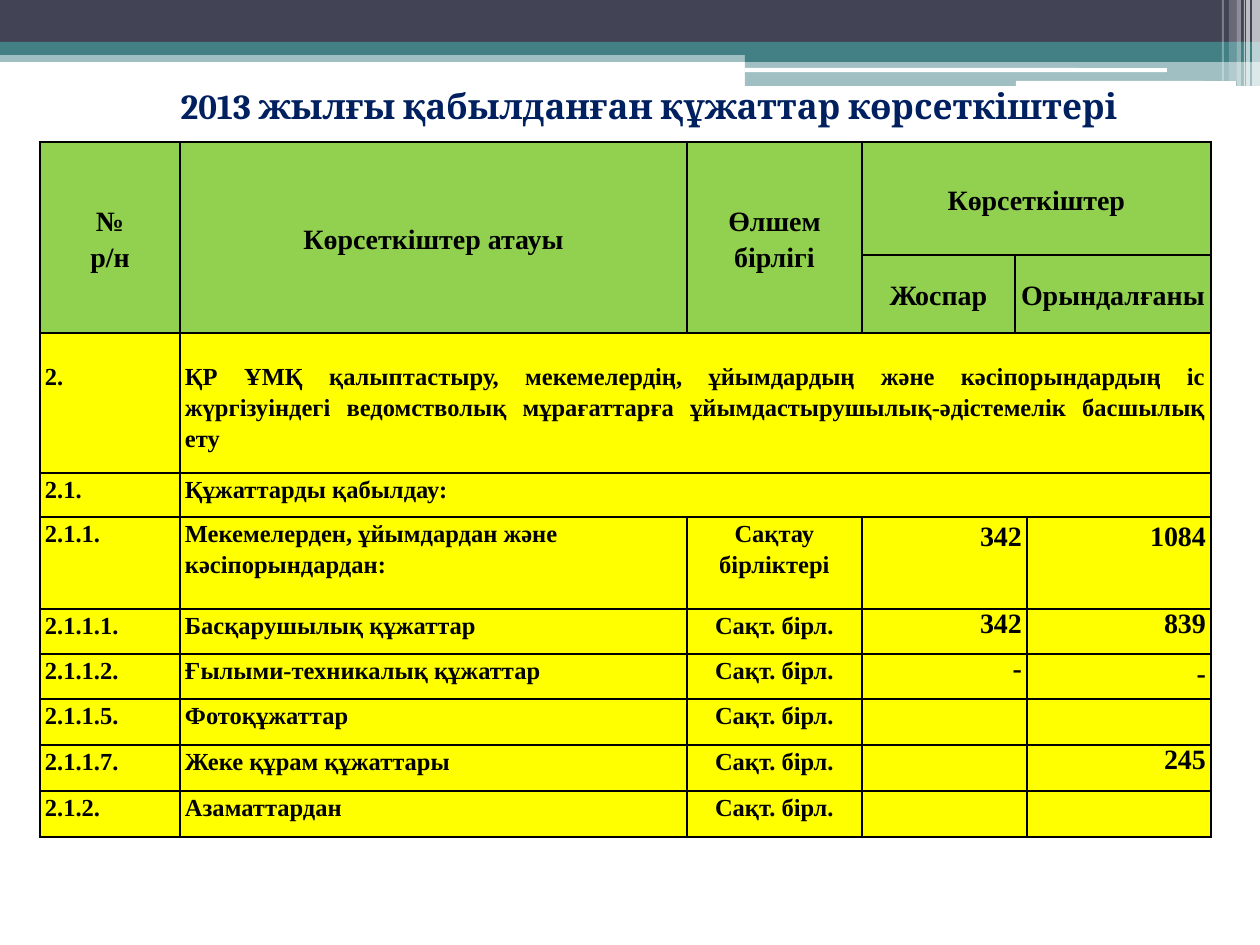
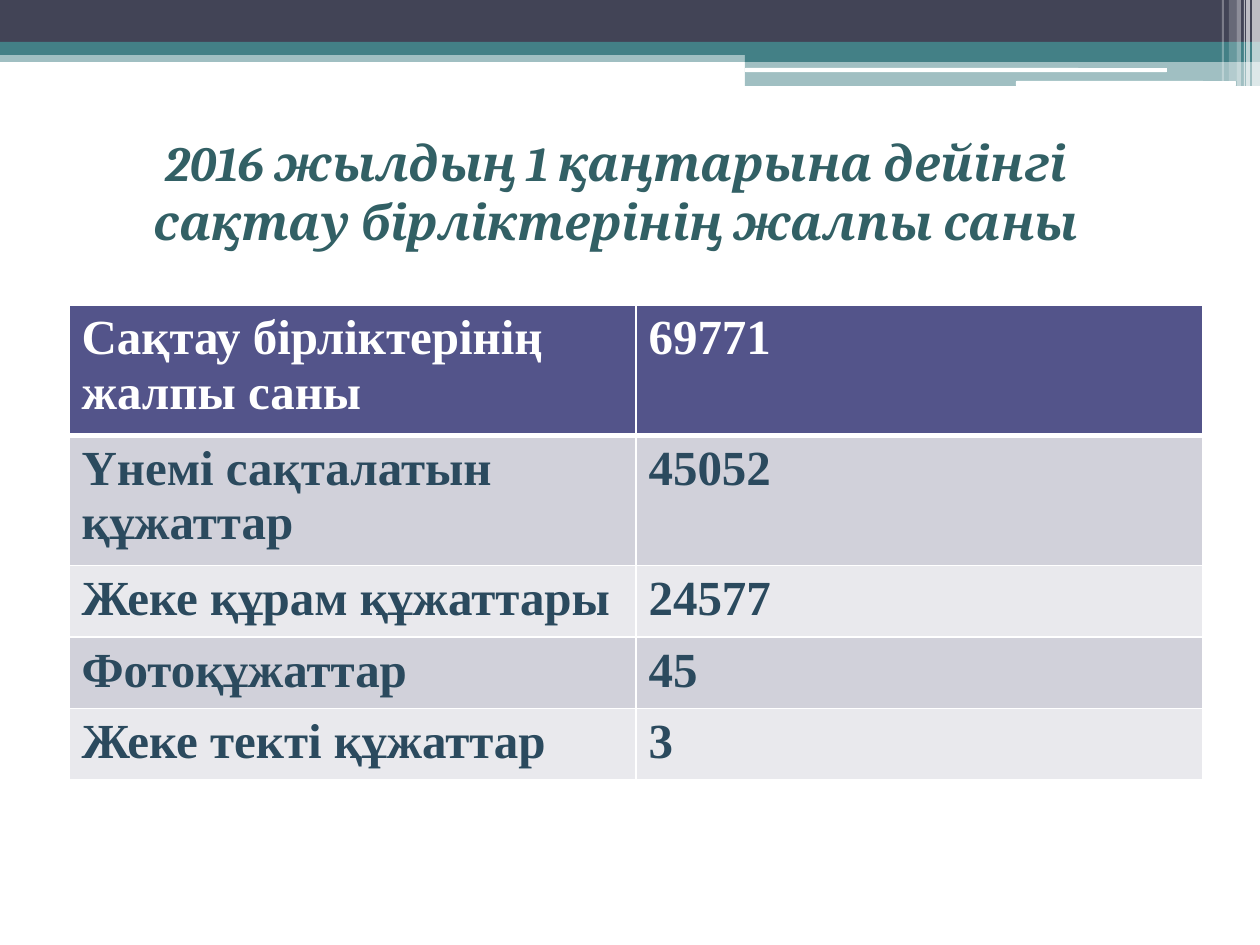
from dataclasses import dataclass

import lxml.etree
import pptx
import pptx.util
from pptx.dml.color import RGBColor
from pptx.enum.shapes import MSO_SHAPE
from pptx.enum.text import MSO_ANCHOR, PP_ALIGN
from pptx.oxml.ns import qn

PX_PER_INCH = 126
EMU_PER_PX = 914400 / PX_PER_INCH

SLATE = RGBColor(0x42, 0x44, 0x56)
TEAL = RGBColor(0x43, 0x80, 0x86)
DARK_TEAL = RGBColor(0x32, 0x60, 0x65)
NAVY = RGBColor(0x00, 0x20, 0x60)
INDIGO = RGBColor(0x53, 0x54, 0x8A)
STEEL = RGBColor(0x2B, 0x4A, 0x5E)
GREY = RGBColor(0xD1, 0xD1, 0xDA)
LIGHT_GREY = RGBColor(0xE9, 0xE9, 0xED)
GREEN = RGBColor(0x92, 0xD0, 0x50)
YELLOW = RGBColor(0xFF, 0xFF, 0x00)
WHITE = RGBColor(0xFF, 0xFF, 0xFF)
BLACK = RGBColor(0x00, 0x00, 0x00)

TITLE_FONT = "Cambria"
TABLE_FONT = "Times New Roman"
LEFT, CENTER, RIGHT = PP_ALIGN.LEFT, PP_ALIGN.CENTER, PP_ALIGN.RIGHT


@dataclass
class Box:
    left: int
    top: int
    width: int
    height: int


@dataclass
class Band:
    box: Box
    color: RGBColor
    opacity: int = 100
    rounded: bool = False


@dataclass
class Style:
    size: int
    color: RGBColor
    font: str = TABLE_FONT
    italic: bool = False


@dataclass
class Entry:
    """Text block; each line is a paragraph, a newline inside it a line break."""
    lines: tuple[str, ...]
    style: Style
    align: PP_ALIGN = LEFT
    spacing: float = 1.0


@dataclass
class Edges:
    color: RGBColor
    bottom_width: int = 1


BANDS = [
    Band(Box(0, 50, 1260, 12), TEAL, 50),
    Band(Box(0, 0, 1260, 43), SLATE),
    Band(Box(0, 42, 1260, 13), TEAL),
    Band(Box(745, 49, 515, 13), TEAL),
    Band(Box(745, 61, 515, 25), TEAL, 50),
    Band(Box(745, 68, 422, 4), WHITE, rounded=True),
    Band(Box(1016, 81, 220, 5), WHITE, rounded=True),
    Band(Box(1252, 0, 8, 86), WHITE, 65),
    Band(Box(1246, 0, 4, 86), WHITE, 65),
    Band(Box(1244, 0, 1, 86), WHITE, 60),
    Band(Box(1237, 0, 4, 86), WHITE, 40),
    Band(Box(1229, 0, 8, 81), WHITE, 20),
    Band(Box(1222, 0, 2, 81), WHITE, 30),
]


def px(length: float) -> int:
    return round(length * EMU_PER_PX)


def place(box: Box) -> tuple[int, int, int, int]:
    return px(box.left), px(box.top), px(box.width), px(box.height)


def add_slide(deck):
    """Blank slide with the shared header bands."""
    slide = deck.slides.add_slide(deck.slide_layouts[6])
    for band in BANDS:
        preset = MSO_SHAPE.ROUNDED_RECTANGLE if band.rounded else MSO_SHAPE.RECTANGLE
        strip = slide.shapes.add_shape(preset, *place(band.box))
        strip.shadow.inherit = False
        strip.line.fill.background()
        strip.fill.solid()
        strip.fill.fore_color.rgb = band.color
        if band.opacity < 100:
            tint = strip.fill._xPr.find(".//" + qn("a:srgbClr"))
            lxml.etree.SubElement(tint, qn("a:alpha"), val=str(band.opacity * 1000))
    return slide


def add_run(paragraph, text: str, style: Style) -> None:
    run = paragraph.add_run()
    run.text = text
    run.font.name = style.font
    run.font.size = pptx.util.Pt(style.size)
    run.font.bold = True
    run.font.italic = style.italic
    run.font.color.rgb = style.color


def write(frame, entry: Entry) -> None:
    for index, line in enumerate(entry.lines):
        paragraph = frame.add_paragraph() if index else frame.paragraphs[0]
        paragraph.alignment = entry.align
        paragraph.line_spacing = entry.spacing
        for part, text in enumerate(line.split("\n")):
            if part:
                paragraph.add_line_break()
            add_run(paragraph, text, entry.style)


def add_title(slide, box: Box, text: str, style: Style, anchor: MSO_ANCHOR) -> None:
    frame = slide.shapes.add_textbox(*place(box)).text_frame
    frame.word_wrap = True
    frame.vertical_anchor = anchor
    write(frame, Entry((text,), style, CENTER))


def add_grid(slide, left: int, top: int, widths: list[int], heights: list[int]):
    box = Box(left, top, sum(widths), sum(heights))
    grid = slide.shapes.add_table(len(heights), len(widths), *place(box)).table
    grid.horz_banding = False
    grid.first_row = False
    for column, width in zip(grid.columns, widths):
        column.width = px(width)
    for row, height in zip(grid.rows, heights):
        row.height = px(height)
    return grid


def paint(cell, fill: RGBColor, edges: Edges) -> None:
    properties = cell._tc.get_or_add_tcPr()
    for side in ("lnL", "lnR", "lnT", "lnB"):
        points = edges.bottom_width if side == "lnB" else 1
        edge = lxml.etree.SubElement(properties, qn(f"a:{side}"), w=str(pptx.util.Pt(points)))
        solid = lxml.etree.SubElement(edge, qn("a:solidFill"))
        lxml.etree.SubElement(solid, qn("a:srgbClr"), val=str(edges.color))
    cell.fill.solid()
    cell.fill.fore_color.rgb = fill


# Slide 1: accepted documents
HEAD = Style(16, BLACK)
BODY = Style(14, BLACK)
LOOSE = 1.15
UNIT = "Сақт. бірл."
HEADER_ROWS = 2


def heading(*lines: str) -> Entry:
    return Entry(lines, HEAD, CENTER, LOOSE)


def label(text: str, align: PP_ALIGN = LEFT) -> Entry:
    return Entry((text,), BODY, align, LOOSE)


def figure(text: str, spacing: float = 1.0) -> Entry:
    return Entry((text,), HEAD, RIGHT, spacing)


def indicator(number: str, name: str, unit: str = UNIT, plan: Entry | None = None,
              done: Entry | None = None) -> dict[int, Entry]:
    """Cells of one indicator row by column."""
    row = {0: label(number), 1: label(name), 2: label(unit, CENTER), 3: plan, 5: done}
    return {column: entry for column, entry in row.items() if entry}


INDICATORS = [
    {0: heading("№", "р/н"), 1: heading("Көрсеткіштер атауы"),
     2: heading("Өлшем бірлігі"), 3: heading("Көрсеткіштер")},
    {3: heading("Жоспар"), 4: heading("Орындалғаны")},
    {0: label("2."),
     1: label("ҚР ҰМҚ қалыптастыру, мекемелердің, ұйымдардың және кәсіпорындардың іс "
              "жүргізуіндегі ведомстволық мұрағаттарға ұйымдастырушылық-әдістемелік "
              "басшылық\nету", PP_ALIGN.JUSTIFY)},
    {0: label("2.1."), 1: label("Құжаттарды қабылдау:")},
    indicator("2.1.1.", "Мекемелерден, ұйымдардан және кәсіпорындардан:",
              "Сақтау бірліктері", figure("342", LOOSE), figure("1084", LOOSE)),
    indicator("2.1.1.1.", "Басқарушылық құжаттар", plan=figure("342"), done=figure("839")),
    indicator("2.1.1.2.", "Ғылыми-техникалық құжаттар",
              plan=figure("-"), done=figure("-", LOOSE)),
    indicator("2.1.1.5.", "Фотоқұжаттар"),
    indicator("2.1.1.7.", "Жеке құрам құжаттары", done=figure("245")),
    indicator("2.1.2.", "Азаматтардан"),
]


def build_indicators(deck) -> None:
    slide = add_slide(deck)
    widths = [140, 507, 175, 153, 12, 184]
    heights = [113, 78, 140, 44, 92, 45, 45, 46, 46, 46]
    grid = add_grid(slide, 40, 142, widths, heights)
    for r, row in enumerate(INDICATORS):
        for c in range(len(widths)):
            cell = grid.cell(r, c)
            cell.margin_left = cell.margin_right = px(5)
            cell.margin_top = px(27 if r == HEADER_ROWS else 0)
            cell.margin_bottom = 0
            if r < HEADER_ROWS:
                cell.vertical_anchor = MSO_ANCHOR.MIDDLE
            paint(cell, GREEN if r < HEADER_ROWS else YELLOW, Edges(BLACK))
            if c in row:
                write(cell.text_frame, row[c])

    # Merged headers, section rows and plan cells
    spans = [((0, c), (1, c)) for c in range(3)]
    spans += [((0, 3), (0, 5)), ((1, 4), (1, 5))]
    spans += [((r, 1), (r, 5)) for r in (2, 3)]
    spans += [((r, 3), (r, 4)) for r in range(4, len(heights))]
    for start, end in spans:
        grid.cell(*start).merge(grid.cell(*end))

    add_title(slide, Box(103, 78, 1092, 56), "2013 жылғы қабылданған құжаттар көрсеткіштері",
              Style(20, NAVY, TITLE_FONT), MSO_ANCHOR.TOP)


# Slide 2: total storage units
STORAGE_TOTALS = [
    ("Сақтау бірліктерінің жалпы саны", "69771"),
    ("Үнемі сақталатын құжаттар", "45052"),
    ("Жеке құрам құжаттары", "24577"),
    ("Фотоқұжаттар", "45"),
    ("Жеке текті құжаттар", "3"),
]


def build_storage_totals(deck) -> None:
    slide = add_slide(deck)
    add_title(slide, Box(49, 117, 1134, 148),
              "2016 жылдың 1 қаңтарына дейінгі\nсақтау бірліктерінің жалпы саны",
              Style(28, DARK_TEAL, TITLE_FONT, italic=True), MSO_ANCHOR.MIDDLE)
    # Rows grow from this minimum to fit their text
    grid = add_grid(slide, 69, 305, [567, 567], [52] * len(STORAGE_TOTALS))
    for r, row in enumerate(STORAGE_TOTALS):
        is_total = r == 0
        fill = INDIGO if is_total else GREY if r % 2 else LIGHT_GREY
        style = Style(28, WHITE if is_total else STEEL)
        for c, text in enumerate(row):
            cell = grid.cell(r, c)
            paint(cell, fill, Edges(WHITE, 3 if is_total else 1))
            write(cell.text_frame, Entry((text,), style))


def main() -> None:
    deck = pptx.Presentation()
    deck.slide_width, deck.slide_height = px(1260), px(945)
    build_indicators(deck)
    build_storage_totals(deck)
    deck.save("out.pptx")


if __name__ == "__main__":
    main()
